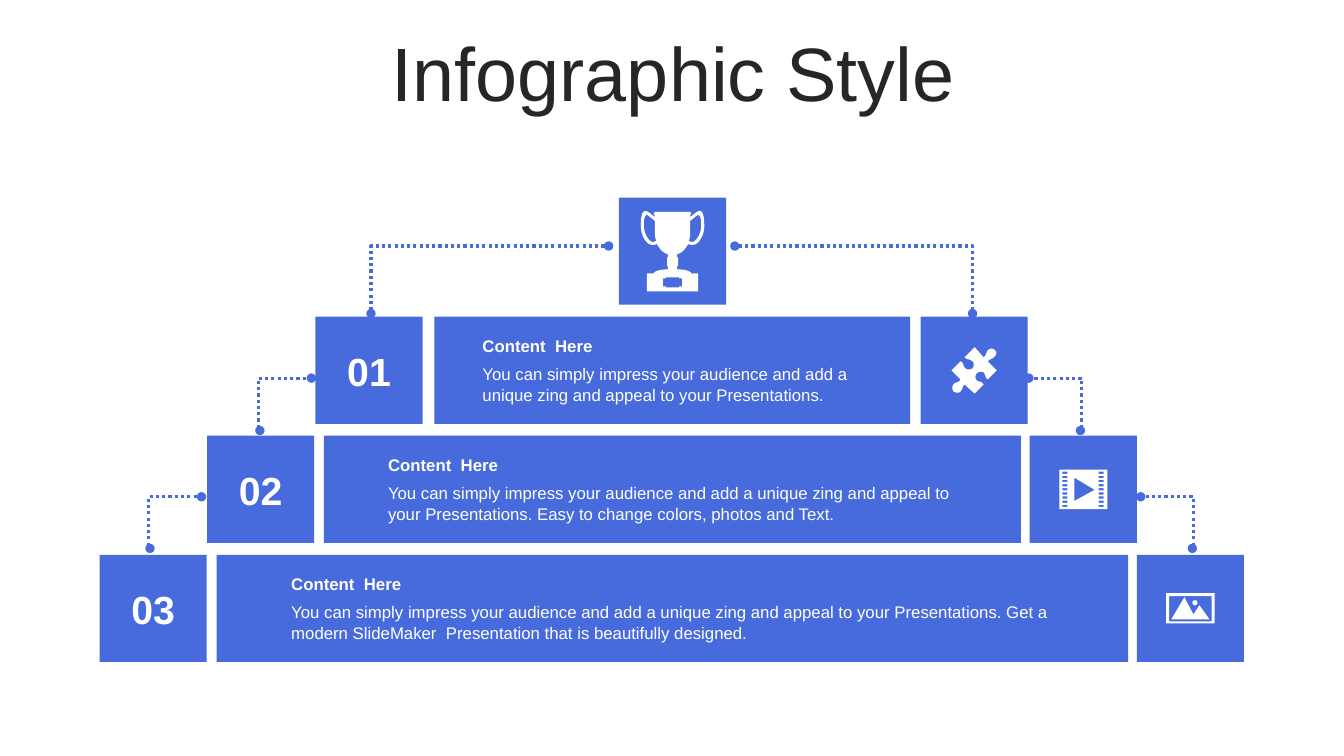
from math import cos, radians, sin

from lxml.etree import SubElement
from pptx import Presentation
from pptx.dml.color import RGBColor
from pptx.enum.dml import MSO_LINE as Dash
from pptx.enum.shapes import MSO_CONNECTOR as Link, MSO_SHAPE as Shape
from pptx.enum.text import MSO_ANCHOR as Anchor, MSO_AUTO_SIZE as Fit, PP_ALIGN as Align
from pptx.oxml.ns import qn
from pptx.util import Cm, Pt

BLUE, WHITE, DARK = "476ADD", "FFFFFF", "262626"
CELL = 2.7        # side of a square and height of a band
TOP, STEP = 4.98, 3
UNIT = 0.0254     # one icon grid unit in cm

TITLE = {"size": Pt(54), "name": "Arial"}
NUMBER = {"size": Pt(28), "name": "Arial", "bold": True}
HEAD = {"size": Pt(12), "name": "Arial", "bold": True}
BODY = {"size": Pt(12), "name": "Arial"}

# number x, band x, band width, icon x, text x, text width, text
BANDS = [
    (7.95, 10.95, 11.99, 23.2, 11.91, 10.08,
     "You can simply impress your audience and add a unique zing and appeal "
     "to your Presentations."),
    (5.22, 8.16, 17.57, 25.95, 9.53, 14.83,
     "You can simply impress your audience and add a unique zing and appeal "
     "to your Presentations. Easy to change colors, photos and Text."),
    (2.51, 5.46, 22.97, 28.65, 7.09, 19.74,
     "You can simply impress your audience and add a unique zing and appeal "
     "to your Presentations. Get a modern SlideMaker  Presentation that is "
     "beautifully designed."),
]
# start x, start y, end x, end y
SIDES = [(3.78, 13.82, 5.08, 12.52), (6.55, 10.85, 7.85, 9.53),
         (30.05, 13.82, 28.75, 12.52), (27.23, 10.85, 25.93, 9.53)]
ARMS = [(15.34, 6.2, 9.35, 7.9), (18.52, 6.2, 24.51, 7.9)]

# Icon outlines: a pair is a corner, six numbers are a Bezier curve.
PUZZLE = [
    (43, 3), (45, 4, 45, 7, 43, 9), (41, 12, 39, 11, 36, 14), (45, 23), (36, 32),
    (33, 30, 34, 27, 32, 25), (30, 24, 27, 24, 25, 26), (24, 27, 23, 30, 25, 33),
    (28, 35, 29, 33, 32, 37), (23, 46), (13, 37), (10, 40, 12, 40, 9, 44),
    (7, 46, 4, 45, 2, 44), (1, 42, 0, 39, 2, 37), (4, 34, 7, 36, 9, 32),
    (0, 23), (9, 14), (13, 16, 11, 19, 14, 21), (16, 23, 19, 22, 21, 21),
    (22, 19, 23, 16, 21, 14), (17, 11, 16, 13, 13, 10), (23, 0), (32, 10),
    (35, 7, 34, 6, 36, 3), (38, 1, 42, 1, 43, 3)]
CUP = [
    (6, 80), (6, 62), (13, 62), (13, 60, 19, 58, 27, 58), (27, 55),
    (26, 55, 26, 54, 26, 54), (26, 47), (26, 47, 26, 46, 27, 46), (27, 43),
    (22, 42, 19, 38, 16, 33), (11, 35, 7, 33, 5, 30), (2, 26, 0, 21, 0, 15),
    (0, 3, 2, 0, 5, 0), (8, 1, 11, 4, 14, 6), (14, 4), (13, 4, 13, 3, 13, 3),
    (13, 2, 14, 1, 14, 1)]
EAR = [
    (6, 4), (4, 5, 3, 7, 3, 14), (3, 19, 5, 25, 7, 27), (9, 30, 11, 32, 15, 30),
    (15, 28, 14, 26, 14, 23), (14, 10), (10, 7, 7, 4, 6, 4)]
PLATE = [(25, 76), (25, 75), (22, 75), (22, 67), (25, 67), (25, 66)]
SUN = [(28.5, 7), (30, 7, 31, 8, 31, 9.5), (31, 11, 30, 12, 28.5, 12),
       (27, 12, 26, 11, 26, 9.5), (26, 8, 27, 7, 28.5, 7)]
HILLS = [(18, 4), (27, 21), (33, 12), (43, 26), (5, 26)]


def trace(path, parts=8):
    """Turn corners and curves into a list of points."""
    dots = []
    for seg in path:
        if len(seg) == 2:
            dots.append(seg)
            continue
        ends = [dots[-1], seg[:2], seg[2:4], seg[4:]]
        for k in range(1, parts + 1):
            t = k / parts
            mix = ((1 - t) ** 3, 3 * t * (1 - t) ** 2, 3 * t * t * (1 - t), t ** 3)
            dots.append(tuple(sum(m * e[i] for m, e in zip(mix, ends)) for i in (0, 1)))
    return dots


def flip(dots, wide):
    return [(wide - x, y) for x, y in reversed(dots)]


def rect(x, y, w, h):
    return [(x, y), (x + w, y), (x + w, y + h), (x, y + h)]


def color(code):
    return RGBColor.from_string(code)


def paint(shape, code):
    shape.shadow.inherit = False
    shape.fill.solid()
    shape.fill.fore_color.rgb = color(code)
    shape.line.fill.background()


def block(slide, x, y, w):
    paint(slide.shapes.add_shape(Shape.RECTANGLE, Cm(x), Cm(y), Cm(w), Cm(CELL)), BLUE)


def write(slide, box, text, style, code=WHITE, align=Align.LEFT,
          anchor=Anchor.TOP, fit=Fit.SHAPE_TO_FIT_TEXT):
    frame = slide.shapes.add_textbox(*map(Cm, box)).text_frame
    for key, val in {"word_wrap": True, "auto_size": fit, "vertical_anchor": anchor}.items():
        setattr(frame, key, val)
    para = frame.paragraphs[0]
    para.alignment = align
    run = para.add_run()
    run.text = text
    for key, val in style.items():
        setattr(run.font, key, val)
    run.font.color.rgb = color(code)
    return para


def icon(slide, x, y, size, loops, turn=0):
    """Draw loops in the middle of the square at x, y."""
    mid_x, mid_y = size[0] / 2, size[1] / 2
    c, s = cos(radians(turn)), sin(radians(turn))

    def place(dot):
        dx, dy = dot[0] - mid_x, dot[1] - mid_y
        return (Cm(x + CELL / 2 + UNIT * (dx * c + dy * s)),
                Cm(y + CELL / 2 + UNIT * (dy * c - dx * s)))

    pen = None
    for loop in loops:
        first, *rest = map(place, loop)
        if pen is None:
            pen = slide.shapes.build_freeform(*first)
        else:
            pen.move_to(*first)
        pen.add_line_segments(rest, close=True)
    shape = pen.convert_to_shape()
    paint(shape, WHITE)
    shape.rotation = turn


def link(slide, ends, kind, bend=None):
    """Draw a dotted elbow with a dot at each end."""
    wire = slide.shapes.add_connector(Link.ELBOW, *map(Cm, ends))
    for key, val in {"width": Pt(2.25), "dash_style": Dash.ROUND_DOT}.items():
        setattr(wire.line, key, val)
    wire.line.color.rgb = color(BLUE)
    prop = wire._element.spPr
    geom = prop.find(qn("a:prstGeom"))
    geom.set("prst", kind)
    if bend is not None:
        SubElement(geom.find(qn("a:avLst")), qn("a:gd"), name="adj1", fmla=f"val {bend}")
    for tag in ("a:headEnd", "a:tailEnd"):
        SubElement(prop.find(qn("a:ln")), qn(tag), type="oval")
    SubElement(prop, qn("a:effectLst"))


def band(slide, y, label, row):
    num, left, wide, pic, text, span, body = row
    for x, w in ((num, CELL), (left, wide), (pic, CELL)):
        block(slide, x, y, w)
    write(slide, (num + 0.46, y + 0.64, 1.78, 1.45), label, NUMBER,
          align=Align.CENTER, anchor=Anchor.MIDDLE)
    write(slide, (text, y + 1.07, span, 1.27), body, BODY)
    write(slide, (text, y + 0.36, span, 0.76), "Content  Here", HEAD)


def main():
    deck = Presentation()
    deck.slide_width, deck.slide_height = Cm(33.87), Cm(19.05)
    slide = deck.slides.add_slide(deck.slide_layouts[6])

    title = write(slide, (0.89, 0.94, 32.16, 2.01), "Infographic Style", TITLE,
                  DARK, Align.CENTER, Anchor.MIDDLE, Fit.NONE)
    title.line_spacing, title.space_before = 0.9, Pt(10)

    cup, ear, plate = map(trace, (CUP, EAR, PLATE))
    holes = [rect(x, 2 + 4.1 * k, 5, 2.2) for k in range(9) for x in (3, 39)]
    play = [(15, 8), (15, 31), (35, 20)]
    art = [
        ((46, 46), [trace(PUZZLE)], 45),
        ((47.5, 39), [rect(0, 0, 47.5, 39), play, *holes], 0),
        ((48, 30), [rect(0, 0, 48, 30), rect(3, 3, 42, 25), HILLS, trace(SUN)], 0),
    ]
    peak = 15.6
    block(slide, peak, TOP, CELL)
    icon(slide, peak, TOP, (63, 80),
         [cup + flip(cup, 63), ear, flip(ear, 63), plate + flip(plate, 63)])
    for k, (row, (size, loops, turn)) in enumerate(zip(BANDS, art), 1):
        y = TOP + STEP * k
        band(slide, y, f"{k:02}", row)
        icon(slide, row[3], y, size, loops, turn)
    for ends in SIDES:
        link(slide, ends, "bentConnector3", -2900)
    for ends in ARMS:
        link(slide, ends, "bentConnector2")
    deck.save("out.pptx")


if __name__ == "__main__":
    main()
